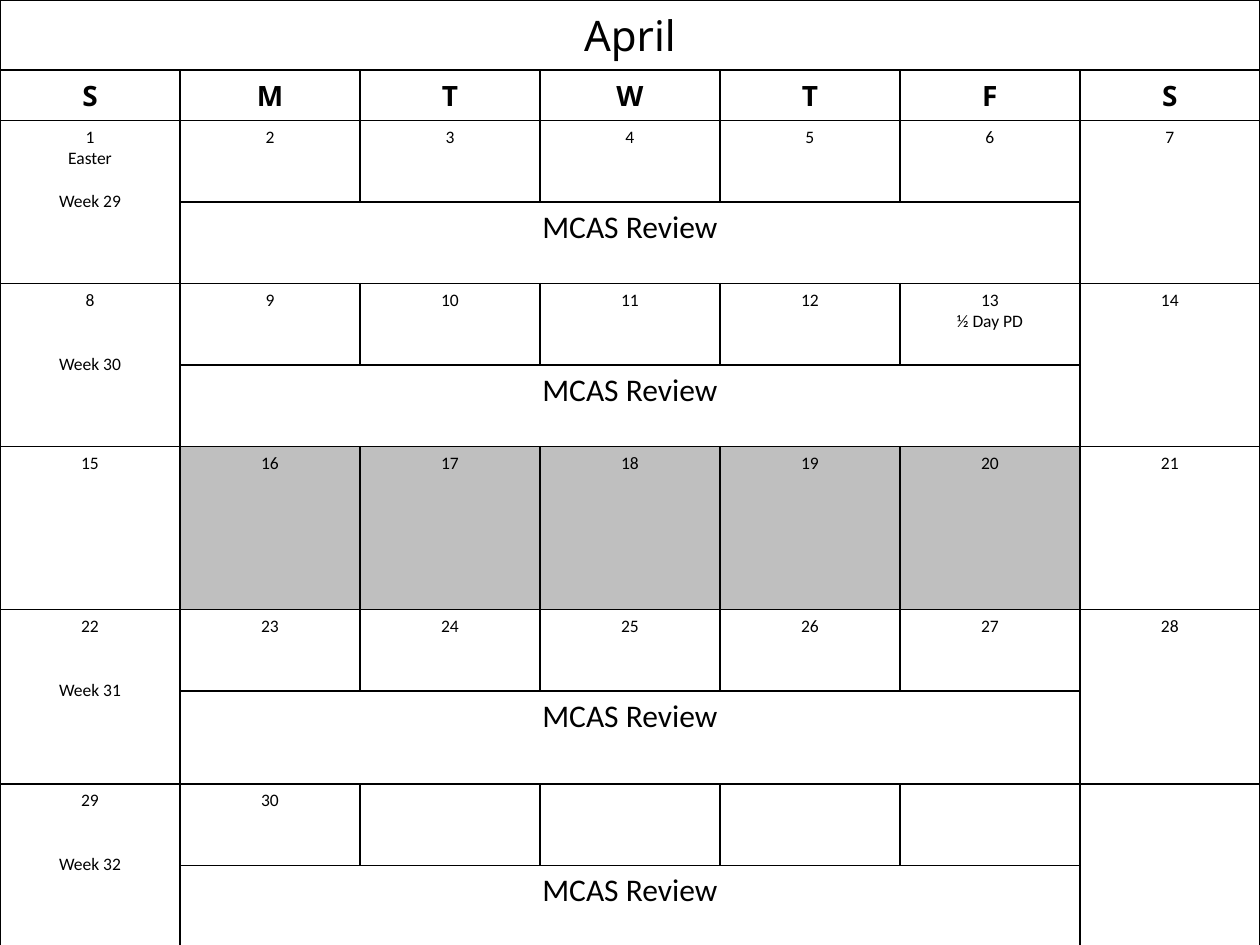
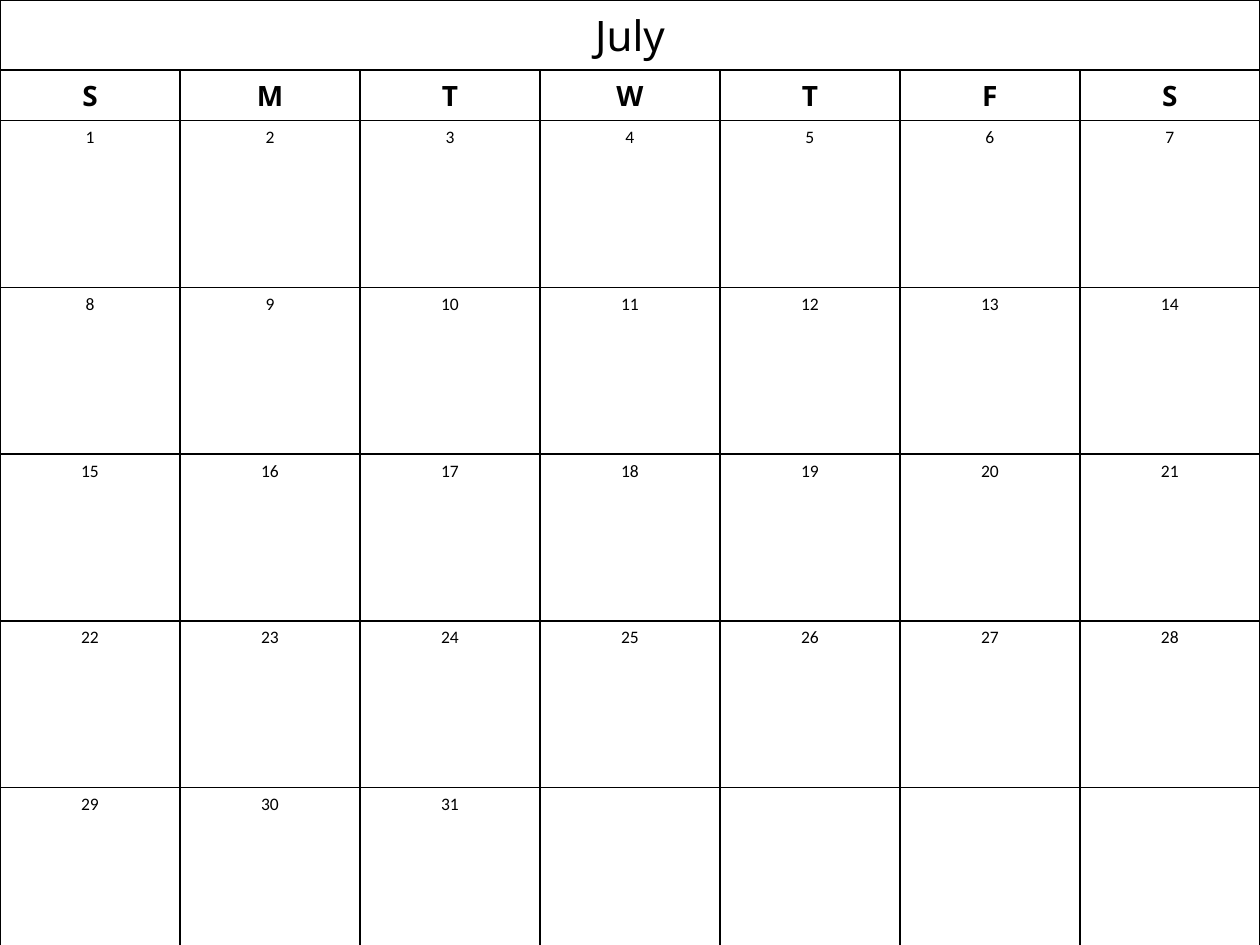
from dataclasses import dataclass

from lxml import etree
from pptx import Presentation
from pptx.dml.color import RGBColor
from pptx.enum.text import PP_ALIGN
from pptx.oxml.ns import qn
from pptx.util import Inches, Pt

CENTER = PP_ALIGN.CENTER
BLANK_LAYOUT = 6
SLIDE_WIDTH, SLIDE_HEIGHT = 10, 7.5
WEEKDAYS = "SMTWTFS"
DAYS_PER_WEEK = len(WEEKDAYS)
WEEKS = 5
FIRST_WEEK_ROW = 2  # below the month and weekday rows
WEEK_LABEL_LINE = 3  # lines from the top of a Sunday cell


@dataclass(frozen=True)
class TextStyle:
    font: str
    size: float
    bold: bool = False


@dataclass(frozen=True)
class Theme:
    ink: str = "000000"
    paper: str = "FFFFFF"
    holiday: str = "BFBFBF"
    border_width: float = 1
    line_height: float = 12.2
    month: TextStyle = TextStyle("Noto Sans", 24)
    weekday: TextStyle = TextStyle("Noto Sans", 16, True)
    day: TextStyle = TextStyle("Calibri", 10)
    lesson: TextStyle = TextStyle("Calibri", 18)


THEME = Theme()


def add_borders(cell):
    properties = cell._tc.get_or_add_tcPr()
    for side in ("lnL", "lnR", "lnT", "lnB"):
        line = etree.SubElement(properties, qn(f"a:{side}"), w=str(Pt(THEME.border_width)))
        fill = etree.SubElement(line, qn("a:solidFill"))
        etree.SubElement(fill, qn("a:srgbClr"), val=THEME.ink)


def fill_cell(cell, color):
    cell.fill.solid()
    cell.fill.fore_color.rgb = RGBColor.from_string(color)


def format_paragraph(paragraph, style):
    paragraph.alignment = CENTER
    paragraph.font.name = style.font
    paragraph.font.size = Pt(style.size)
    paragraph.font.bold = style.bold
    paragraph.font.color.rgb = RGBColor.from_string(THEME.ink)


def write_cell(cell, lines, style):
    cell.text = "\n".join(lines)
    for paragraph in cell.text_frame.paragraphs:
        format_paragraph(paragraph, style)


def add_week_label(cell, label):
    """Put the label on a fixed line of the cell, below what is already there."""
    lines_used = len(cell.text_frame.paragraphs)
    paragraph = cell.text_frame.add_paragraph()
    paragraph.text = label
    format_paragraph(paragraph, THEME.day)
    paragraph.space_before = Pt((WEEK_LABEL_LINE - lines_used) * THEME.line_height)


def add_grid(slide, box, row_heights):
    left, top, width, height = (Inches(length) for length in box)
    frame = slide.shapes.add_table(len(row_heights), DAYS_PER_WEEK, left, top, width, height)
    table = frame.table
    table.first_row = table.horz_banding = False
    for column in table.columns:
        column.width = int(width / DAYS_PER_WEEK)
    for row, row_height in zip(table.rows, row_heights):
        row.height = Inches(row_height)
    for cell in table.iter_cells():
        add_borders(cell)
        fill_cell(cell, THEME.paper)
    return table


def write_heading(table, month):
    table.cell(0, 0).merge(table.cell(0, DAYS_PER_WEEK - 1))
    write_cell(table.cell(0, 0), [month], THEME.month)
    for column, weekday in enumerate(WEEKDAYS):
        write_cell(table.cell(1, column), [weekday], THEME.weekday)


def write_days(table, week_rows, day_count, events):
    """Number the days of a month that starts on a Sunday."""
    for day in range(1, day_count + 1):
        week, column = divmod(day - 1, DAYS_PER_WEEK)
        lines = [str(day)] + events.get(day, [])
        write_cell(table.cell(week_rows[week], column), lines, THEME.day)


def add_lesson_week(table, row, label, lesson):
    """Split a week into days above and one lesson bar, between full-height weekends."""
    saturday = DAYS_PER_WEEK - 1
    for column in (0, saturday):
        table.cell(row, column).merge(table.cell(row + 1, column))
    table.cell(row + 1, 1).merge(table.cell(row + 1, saturday - 1))
    add_week_label(table.cell(row, 0), label)
    write_cell(table.cell(row + 1, 1), [lesson], THEME.lesson)


def add_lesson_month(slide, box):
    heading_heights = [0.54, 0.4]
    holiday_week = 2
    tall_week, extra_height = 3, 0.09
    week_labels = {0: "Week 29", 1: "Week 30", 3: "Week 31", 4: "Week 32"}
    half_week = (box[3] - sum(heading_heights) - extra_height) / (2 * WEEKS)

    heights, week_rows = list(heading_heights), []
    for week in range(WEEKS):
        week_rows.append(len(heights))
        heights += [2 * half_week] if week == holiday_week else [half_week, half_week]
        if week == tall_week:
            heights[-1] += extra_height

    table = add_grid(slide, box, heights)
    write_heading(table, "April")
    write_days(table, week_rows, 30, {1: ["Easter"], 13: ["½ Day PD"]})
    for week, label in week_labels.items():
        add_lesson_week(table, week_rows[week], label, "MCAS Review")
    for column in range(1, DAYS_PER_WEEK - 1):
        fill_cell(table.cell(week_rows[holiday_week], column), THEME.holiday)


def add_open_month(slide, box):
    heading_heights = [0.51, 0.37]
    week_height = (box[3] - sum(heading_heights)) / WEEKS
    table = add_grid(slide, box, heading_heights + [week_height] * WEEKS)
    write_heading(table, "July")
    write_days(table, range(FIRST_WEEK_ROW, FIRST_WEEK_ROW + WEEKS), 31, {})


def main():
    presentation = Presentation()
    presentation.slide_width = Inches(SLIDE_WIDTH)
    presentation.slide_height = Inches(SLIDE_HEIGHT)
    page = (0, 0, SLIDE_WIDTH, SLIDE_HEIGHT)
    for add_month in (add_lesson_month, add_open_month):
        slide = presentation.slides.add_slide(presentation.slide_layouts[BLANK_LAYOUT])
        add_month(slide, page)
    presentation.save("out.pptx")


if __name__ == "__main__":
    main()
